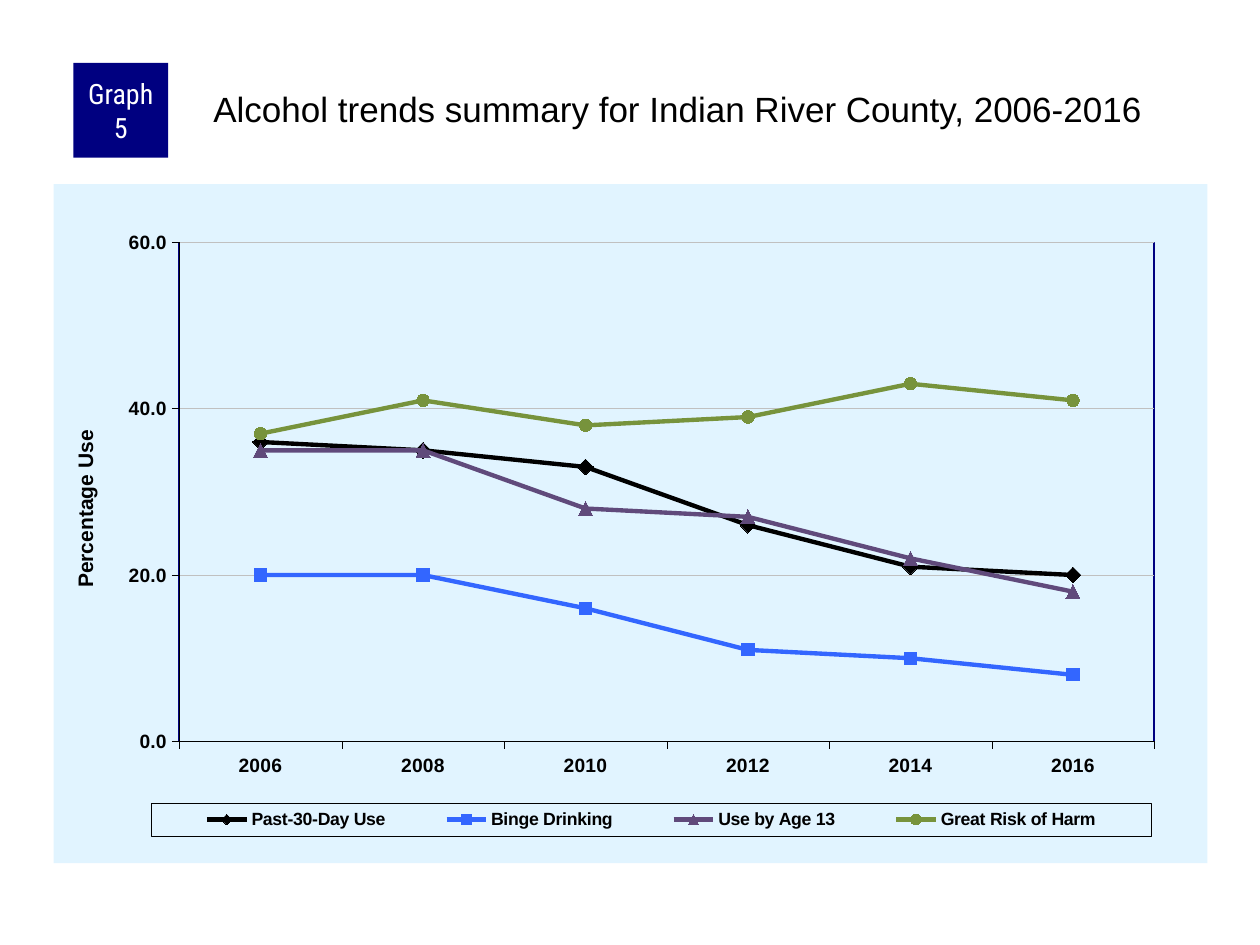
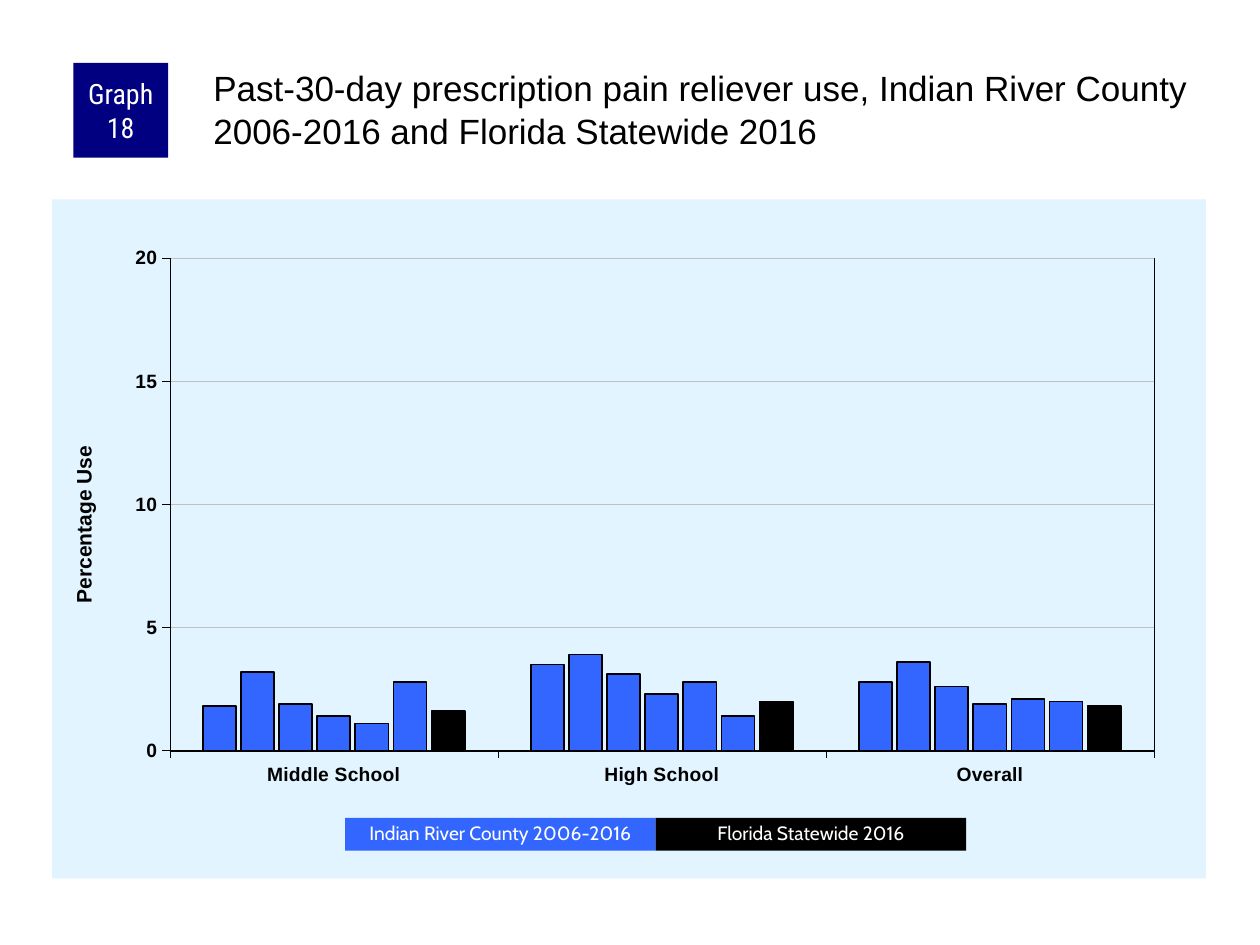
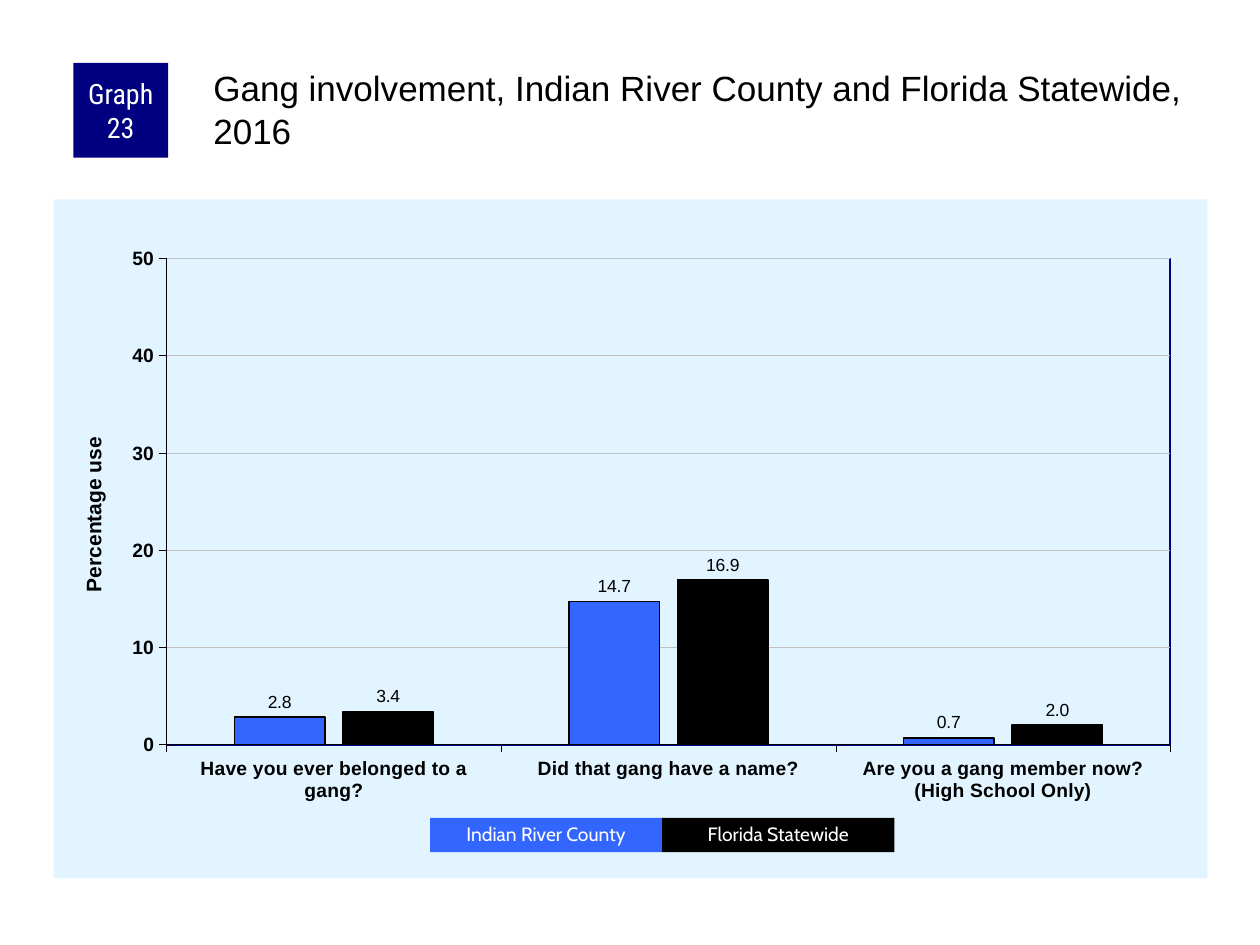
from dataclasses import dataclass

from lxml import etree
from pptx import Presentation
from pptx.chart.data import CategoryChartData
from pptx.dml.color import RGBColor
from pptx.enum.chart import (
    XL_CHART_TYPE,
    XL_LABEL_POSITION,
    XL_LEGEND_POSITION,
    XL_MARKER_STYLE,
    XL_TICK_MARK,
)
from pptx.enum.shapes import MSO_SHAPE
from pptx.enum.text import MSO_ANCHOR, MSO_AUTO_SIZE, PP_ALIGN
from pptx.oxml import parse_xml
from pptx.util import Cm, Pt

BLACK = RGBColor(0x00, 0x00, 0x00)
WHITE = RGBColor(0xFF, 0xFF, 0xFF)
NAVY = RGBColor(0x00, 0x00, 0x80)
BLUE = RGBColor(0x33, 0x66, 0xFF)
PURPLE = RGBColor(0x60, 0x4A, 0x7B)
GREEN = RGBColor(0x77, 0x93, 0x3C)
PALE_BLUE = RGBColor(0xE1, 0xF4, 0xFF)
GRAY = RGBColor(0xC0, 0xC0, 0xC0)

LINE = XL_CHART_TYPE.LINE_MARKERS
COLUMN = XL_CHART_TYPE.COLUMN_CLUSTERED
DIAMOND = XL_MARKER_STYLE.DIAMOND
SQUARE = XL_MARKER_STYLE.SQUARE
TRIANGLE = XL_MARKER_STYLE.TRIANGLE
CIRCLE = XL_MARKER_STYLE.CIRCLE
TICK_OUTSIDE = XL_TICK_MARK.OUTSIDE
TICK_NONE = XL_TICK_MARK.NONE
OUTSIDE_END = XL_LABEL_POSITION.OUTSIDE_END
LEGEND_BOTTOM = XL_LEGEND_POSITION.BOTTOM
RECTANGLE = MSO_SHAPE.RECTANGLE
TOP = MSO_ANCHOR.TOP
MIDDLE = MSO_ANCHOR.MIDDLE
LEFT = PP_ALIGN.LEFT
CENTER = PP_ALIGN.CENTER
NO_AUTO_SIZE = MSO_AUTO_SIZE.NONE

TITLE_ONLY = 5
HAIRLINE = 0.25
CHART_NS = "http://schemas.openxmlformats.org/drawingml/2006/chart"
DRAWING_NS = "http://schemas.openxmlformats.org/drawingml/2006/main"


@dataclass
class Series:
    name: str
    values: list[float]
    color: RGBColor
    marker: int | None = None
    marker_size: int = 7


@dataclass
class TrendChart:
    kind: int
    left: float
    top: float
    axis_title: str
    axis_title_at: tuple[float, float]
    maximum: float
    step: float
    categories: list[str]
    series: list[Series]
    plot: tuple[float, float, float, float]
    border: RGBColor
    border_width: float
    number_format: str = "General"
    gap: int = 150
    overlap: int = 0
    labels: bool = False
    legend_at: tuple[float, float, float, float] | None = None


@dataclass
class LegendKey:
    texts: tuple[str, str]
    left: float
    top: float
    width: float
    height: float


@dataclass
class GraphSlide:
    number: int
    title: str
    title_top: float
    chart: TrendChart
    key: LegendKey | None = None


GRAPHS = [
    GraphSlide(
        5, "Alcohol trends summary for Indian River County, 2006-2016", 1.69,
        TrendChart(
            LINE, 1.08, 3.71, "Percentage Use", (0.013, 0.357), 60, 20,
            ["2006", "2008", "2010", "2012", "2014", "2016"],
            [
                Series("Past-30-Day Use", [36, 35, 33, 26, 21, 20], BLACK, DIAMOND, 9),
                Series("Binge Drinking", [20, 20, 16, 11, 10, 8], BLUE, SQUARE),
                Series("Use by Age 13", [35, 35, 28, 27, 22, 18], PURPLE, TRIANGLE, 8),
                Series("Great Risk of Harm", [37, 41, 38, 39, 43, 41], GREEN, CIRCLE),
            ],
            (0.109, 0.086, 0.845, 0.735), NAVY, 1, "0.0",
            legend_at=(0.085, 0.912, 0.866, 0.048),
        ),
    ),
    GraphSlide(
        18,
        "Past-30-day prescription pain reliever use, Indian River County "
        "2006-2016 and Florida Statewide 2016", 1.27,
        TrendChart(
            COLUMN, 1.05, 4.02, "Percentage Use", (0.013, 0.357), 20, 5,
            ["Middle School", "High School", "Overall"],
            [
                Series("Series 1", [1.8, 3.5, 2.8], BLUE),
                Series("Series 2", [3.2, 3.9, 3.6], BLUE),
                Series("Series 3", [1.9, 3.1, 2.6], BLUE),
                Series("Series 4", [1.4, 2.3, 1.9], BLUE),
                Series("Series 5", [1.1, 2.8, 2.1], BLUE),
                Series("Series 6", [2.8, 1.4, 2], BLUE),
                Series("Series 7", [1.6, 2, 1.8], BLACK),
            ],
            (0.102, 0.086, 0.853, 0.726), BLACK, HAIRLINE, gap=200, overlap=-15,
        ),
        LegendKey(("Indian River County 2006-2016", "Florida Statewide 2016"), 6.96, 16.49, 6.26, 0.66),
    ),
    GraphSlide(
        23, "Gang involvement, Indian River County and Florida Statewide, 2016", 1.27,
        TrendChart(
            COLUMN, 1.08, 4.02, "Percentage use", (0.02, 0.344), 50, 10,
            [
                "Have you ever belonged to a gang?",
                "Did that gang have a name?",
                "Are you a gang member now?\n(High School Only)",
            ],
            [
                Series("Series 1", [2.8, 14.7, 0.7], BLUE),
                Series("Series 2", [3.4, 16.9, 2], BLACK),
            ],
            (0.098, 0.087, 0.87, 0.716), NAVY, 1, overlap=-20, labels=True,
        ),
        LegendKey(("Indian River County", "Florida Statewide"), 8.67, 16.49, 4.68, 0.69),
    ),
]


def style_font(font, size: float, color: RGBColor = BLACK, name: str = "Arial", bold: bool = False) -> None:
    font.size = Pt(size)
    font.name = name
    font.bold = bold
    font.color.rgb = color


def style_line(line, color: RGBColor, width: float) -> None:
    line.color.rgb = color
    line.width = Pt(width)


def chart_area_format(fill: RGBColor | None, line: RGBColor | None, width: float = HAIRLINE):
    def paint(color: RGBColor | None) -> str:
        if color is None:
            return "<a:noFill/>"
        return f'<a:solidFill><a:srgbClr val="{color}"/></a:solidFill>'

    return parse_xml(
        f'<c:spPr xmlns:c="{CHART_NS}" xmlns:a="{DRAWING_NS}">{paint(fill)}'
        f'<a:ln w="{Pt(width)}">{paint(line)}</a:ln></c:spPr>'
    )


def place_manually(parent, index: int, box: tuple[float, ...], inner: bool = False) -> None:
    layout = parent.find(f"{{{CHART_NS}}}layout")
    if layout is not None:
        parent.remove(layout)
    layout = etree.Element(f"{{{CHART_NS}}}layout")
    parent.insert(index, layout)
    manual = etree.SubElement(layout, f"{{{CHART_NS}}}manualLayout")
    settings = [("layoutTarget", "inner")] if inner else []
    settings += [("xMode", "edge"), ("yMode", "edge")]
    settings += [(name, str(value)) for name, value in zip("xywh", box)]
    for name, value in settings:
        etree.SubElement(manual, f"{{{CHART_NS}}}{name}").set("val", value)


def add_box(slide, text: str, left: float, top: float, width: float, height: float,
            color: RGBColor, font_name: str, size: float):
    shape = slide.shapes.add_shape(RECTANGLE, Cm(left), Cm(top), Cm(width), Cm(height))
    shape.shadow.inherit = False
    shape.fill.solid()
    shape.fill.fore_color.rgb = color
    shape.line.fill.background()
    text_frame = shape.text_frame
    text_frame.text = text
    text_frame.word_wrap = True
    text_frame.vertical_anchor = MIDDLE
    paragraph = text_frame.paragraphs[0]
    paragraph.alignment = CENTER
    style_font(paragraph.runs[0].font, size, WHITE, font_name)
    return shape


def add_heading(slide, graph: GraphSlide) -> None:
    badge = add_box(slide, f"Graph {graph.number}", 1.48, 1.27, 1.91, 1.91, NAVY, "Roboto Condensed", 16)
    frame = badge.text_frame
    frame.margin_left = frame.margin_right = Cm(0.13)
    frame.margin_top = frame.margin_bottom = 0

    title = slide.shapes.title
    title.left, title.top = Cm(4.22), Cm(graph.title_top)
    title.width, title.height = Cm(20.12), Cm(2.11)
    text_frame = title.text_frame
    text_frame.text = graph.title
    text_frame.word_wrap = True
    text_frame.auto_size = NO_AUTO_SIZE
    text_frame.vertical_anchor = TOP
    text_frame.margin_left = text_frame.margin_top = Cm(0.08)
    text_frame.margin_right = text_frame.margin_bottom = 0
    paragraph = text_frame.paragraphs[0]
    paragraph.alignment = LEFT
    style_font(paragraph.runs[0].font, 20)


def format_axes(chart, trend: TrendChart) -> None:
    for axis in (chart.category_axis, chart.value_axis):
        axis.major_tick_mark = TICK_OUTSIDE
        axis.minor_tick_mark = TICK_NONE
        style_font(axis.tick_labels.font, 11, bold=True)
        style_line(axis.format.line, BLACK, HAIRLINE)
    chart.category_axis.has_major_gridlines = False

    value_axis = chart.value_axis
    value_axis.minimum_scale = 0
    value_axis.maximum_scale = trend.maximum
    value_axis.major_unit = trend.step
    value_axis.has_major_gridlines = True
    style_line(value_axis.major_gridlines.format.line, GRAY, HAIRLINE)
    value_axis.tick_labels.number_format = trend.number_format
    value_axis.tick_labels.number_format_is_linked = False

    axis_title = value_axis.axis_title
    axis_title.text_frame.text = trend.axis_title
    style_font(axis_title.text_frame.paragraphs[0].runs[0].font, 12, bold=True)
    place_manually(axis_title._element, 1, trend.axis_title_at)


def format_series(chart, trend: TrendChart) -> None:
    plot = chart.plots[0]
    plot.vary_by_categories = False
    if trend.kind == COLUMN:
        plot.gap_width = trend.gap
        plot.overlap = trend.overlap
    for series, entry in zip(plot.series, trend.series):
        if entry.marker is None:
            series.format.fill.solid()
            series.format.fill.fore_color.rgb = entry.color
            style_line(series.format.line, BLACK, 1)
        else:
            series.smooth = False
            style_line(series.format.line, entry.color, 2.5)
            series.marker.style = entry.marker
            series.marker.size = entry.marker_size
            series.marker.format.fill.solid()
            series.marker.format.fill.fore_color.rgb = entry.color
            style_line(series.marker.format.line, entry.color, HAIRLINE)
        if trend.labels:
            labels = series.data_labels
            labels.show_value = True
            labels.number_format = "0.0"
            labels.number_format_is_linked = False
            labels.position = OUTSIDE_END
            style_font(labels.font, 10)


def add_trend_chart(slide, trend: TrendChart) -> None:
    data = CategoryChartData()
    data.categories = trend.categories
    for entry in trend.series:
        data.add_series(entry.name, entry.values)
    frame = slide.shapes.add_chart(
        trend.kind, Cm(trend.left), Cm(trend.top), Cm(23.26), Cm(13.69), data
    )
    chart = frame.chart
    chart.has_title = False
    style_font(chart.font, 8)
    format_axes(chart, trend)
    format_series(chart, trend)

    chart_space = chart._chartSpace
    text_properties = chart_space.find(f"{{{CHART_NS}}}txPr")
    text_properties.addprevious(chart_area_format(PALE_BLUE, None))
    plot_area = chart_space.find(f".//{{{CHART_NS}}}plotArea")
    place_manually(plot_area, 0, trend.plot, inner=True)
    plot_area.append(chart_area_format(None, trend.border, trend.border_width))

    chart.has_legend = trend.legend_at is not None
    if trend.legend_at is not None:
        legend = chart.legend
        legend.position = LEGEND_BOTTOM
        legend.include_in_layout = False
        style_font(legend.font, 10.1, bold=True)
        place_manually(legend._element, 1, trend.legend_at)
        legend_text = legend._element.find(f"{{{CHART_NS}}}txPr")
        legend_text.addprevious(chart_area_format(None, BLACK))


def add_key(slide, key: LegendKey) -> None:
    for index, (text, color) in enumerate(zip(key.texts, (BLUE, BLACK))):
        shape = add_box(slide, text, key.left + index * key.width, key.top,
                        key.width, key.height, color, "Cabin", 11)
        shape.text_frame.paragraphs[0].line_spacing = 0.9


def main() -> None:
    presentation = Presentation()
    presentation.slide_width, presentation.slide_height = Cm(25.4), Cm(19.05)
    for graph in GRAPHS:
        slide = presentation.slides.add_slide(presentation.slide_layouts[TITLE_ONLY])
        add_trend_chart(slide, graph.chart)
        add_heading(slide, graph)
        if graph.key is not None:
            add_key(slide, graph.key)
    presentation.save("out.pptx")


if __name__ == "__main__":
    main()
